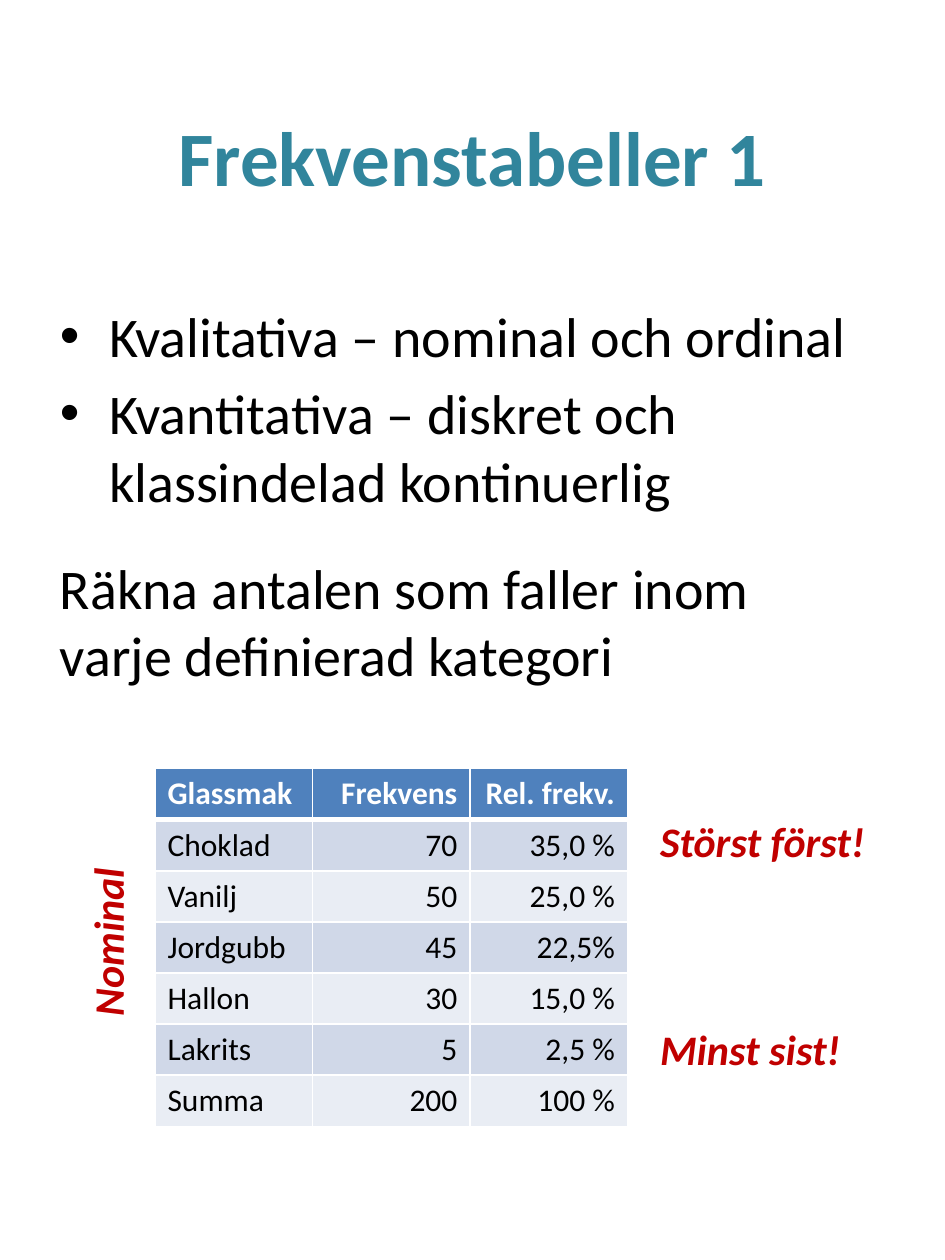
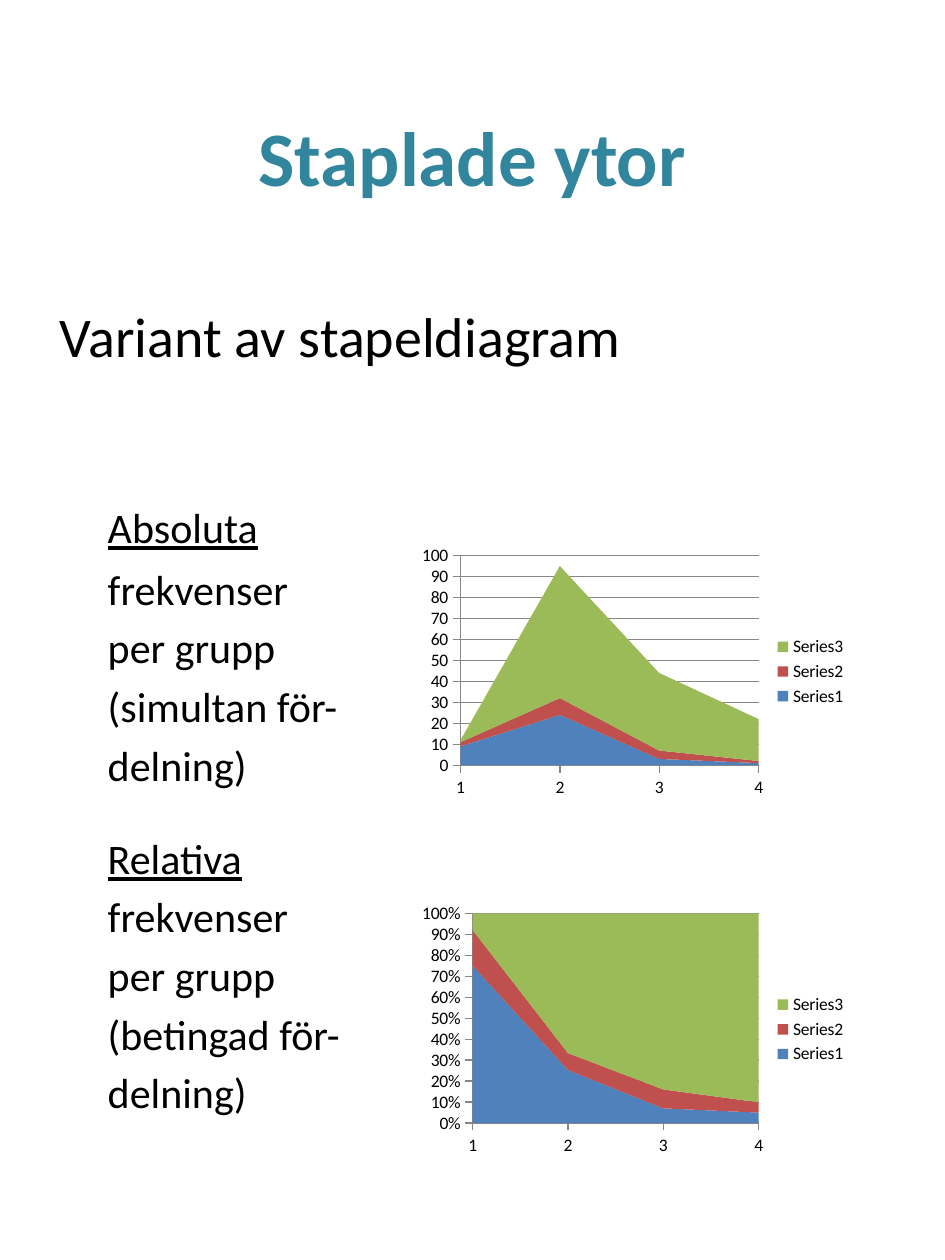
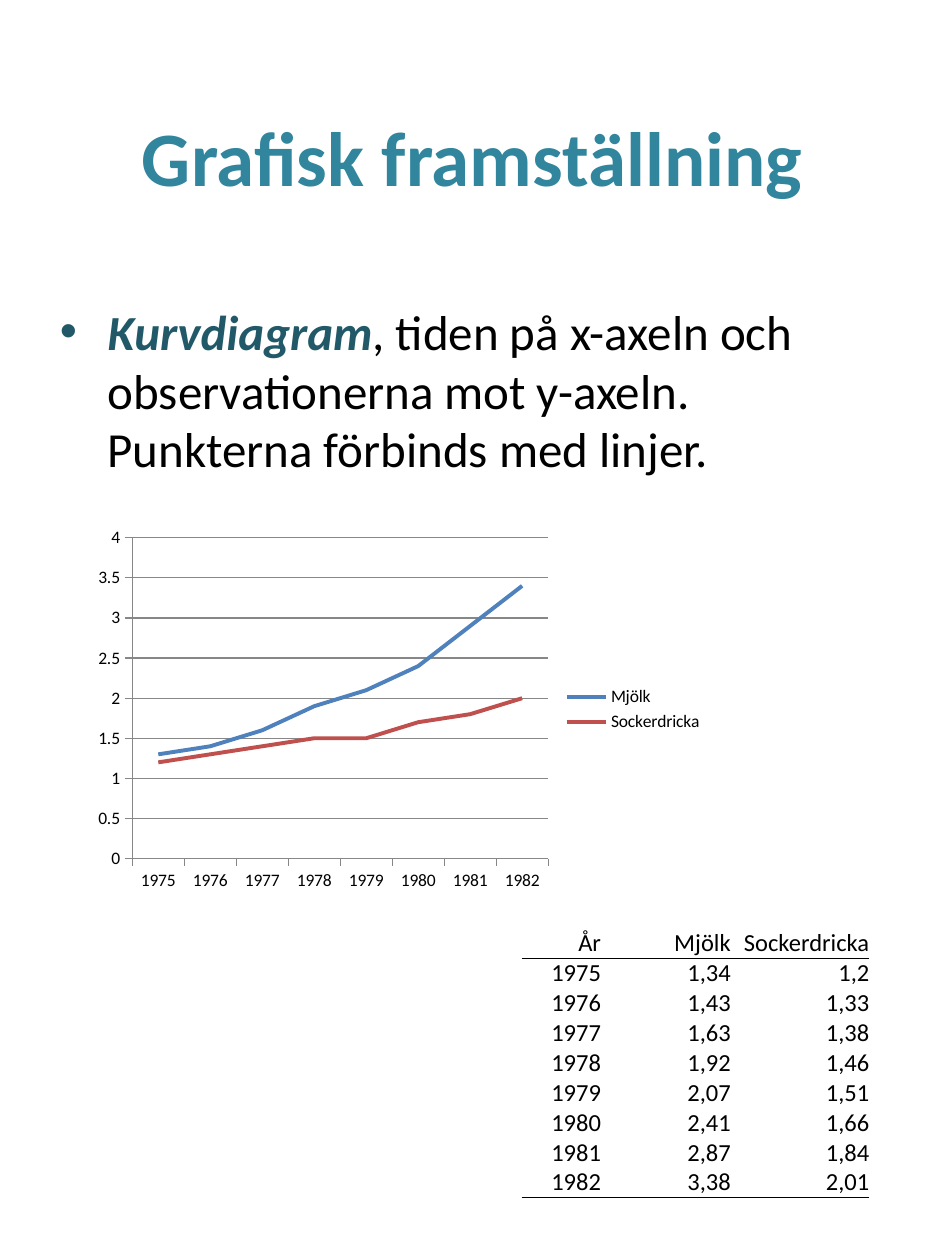
from typing import NamedTuple

from lxml.etree import SubElement
from pptx import Presentation
from pptx.chart.data import CategoryChartData
from pptx.dml.color import RGBColor
from pptx.enum.chart import XL_CHART_TYPE, XL_LEGEND_POSITION, XL_TICK_MARK
from pptx.enum.text import MSO_ANCHOR, MSO_AUTO_SIZE, PP_ALIGN
from pptx.oxml.ns import qn
from pptx.util import Inches, Pt

FONT = "Calibri"
BLACK, WHITE, RED = "000000", "FFFFFF", "C00000"
TEAL, DARK_TEAL, AXIS_GREY = "31859C", "215968", "878787"
HEADER_FILL, BAND_FILLS = "4F81BD", ("D0D8E8", "E9EDF4")
SERIES_COLORS = ("4F81BD", "C0504D", "9BBB59")
NO_TABLE_STYLE = "{2D5ABB26-0587-4C30-8999-92F81FD0307C}"

SLIDE_WIDTH, SLIDE_HEIGHT, TEXT_WIDTH = 7.5, 10, 6.75
MARGIN = (SLIDE_WIDTH - TEXT_WIDTH) / 2
BODY_TOP = 2.34

FLAVOURS = (
    ("Glassmak", "Frekvens", "Rel. frekv."),
    ("Choklad", "70", "35,0 %"),
    ("Vanilj", "50", "25,0 %"),
    ("Jordgubb", "45", "22,5%"),
    ("Hallon", "30", "15,0 %"),
    ("Lakrits", "5", "2,5 %"),
    ("Summa", "200", "100 %"),
)
DRINKS = (
    ("År", "Mjölk", "Sockerdricka"),
    ("1975", "1,34", "1,2"),
    ("1976", "1,43", "1,33"),
    ("1977", "1,63", "1,38"),
    ("1978", "1,92", "1,46"),
    ("1979", "2,07", "1,51"),
    ("1980", "2,41", "1,66"),
    ("1981", "2,87", "1,84"),
    ("1982", "3,38", "2,01"),
)
GROUP_COUNTS = {
    "Series1": (9, 24, 3, 1),
    "Series2": (2, 8, 4, 1),
    "Series3": (1, 63, 37, 20),
}


class Box(NamedTuple):
    left: float
    top: float
    width: float
    height: float

    def emu(self):
        return tuple(Inches(v) for v in self)


class Para(NamedTuple):
    text: str
    size: float = 32
    before: float = 0
    margin: float = 0
    bullet: bool = False
    underline: bool = False


class Label(NamedTuple):
    text: str
    box: Box
    rotation: float = 0
    align: PP_ALIGN = PP_ALIGN.LEFT


LABELS = (
    Label("Störst först!", Box(5.14, 6.42, 1.97, 0.55)),
    Label("Minst sist!", Box(5.14, 8.07, 1.97, 0.55)),
    Label("Nominal", Box(-0.11, 7.2, 1.97, 0.55), 270, PP_ALIGN.CENTER),
)


def rgb(value: str) -> RGBColor:
    return RGBColor.from_string(value)


def style(font, size: float, color: str = BLACK, bold: bool = False,
          italic: bool = False) -> None:
    font.name, font.size = FONT, Pt(size)
    font.bold, font.italic = bold, italic
    font.color.rgb = rgb(color)


def add_slide(prs, title: str, body: Box, paras: list[Para]):
    s = prs.slides.add_slide(prs.slide_layouts[1])
    sp = s.shapes.title
    sp.left, sp.top, sp.width, sp.height = Box(MARGIN, 0.4, TEXT_WIDTH, 1.67).emu()
    tf = sp.text_frame
    tf.text = title
    tf.vertical_anchor = MSO_ANCHOR.MIDDLE
    tf.paragraphs[0].alignment = PP_ALIGN.CENTER
    style(tf.paragraphs[0].runs[0].font, 44, TEAL, bold=True)

    sp = s.placeholders[1]
    sp.left, sp.top, sp.width, sp.height = body.emu()
    tf = sp.text_frame
    tf.auto_size = MSO_AUTO_SIZE.NONE
    for i, para in enumerate(paras):
        p = tf.add_paragraph() if i else tf.paragraphs[0]
        p.text = para.text
        p.space_before = Pt(para.before)
        style(p.runs[0].font, para.size)
        p.runs[0].font.underline = para.underline
        pPr = p._p.get_or_add_pPr()
        pPr.set("marL", str(Inches(para.margin)))
        pPr.set("indent", str(-Inches(para.margin) if para.bullet else 0))
        if para.bullet:
            SubElement(pPr, qn("a:buFont")).set("typeface", "Arial")
            SubElement(pPr, qn("a:buChar")).set("char", "•")
        else:
            SubElement(pPr, qn("a:buNone"))
    return s


def add_label(s, label: Label) -> None:
    sp = s.shapes.add_textbox(*label.box.emu())
    sp.rotation = label.rotation
    tf = sp.text_frame
    tf.word_wrap = True
    tf.text = label.text
    p = tf.paragraphs[0]
    p.alignment = label.align
    style(p.runs[0].font, 24, RED, bold=True, italic=True)


def set_border(cell, side: str, color: str, width: float = 1) -> None:
    """Draw one side, L, R, T or B; call in that order and before the fill."""
    ln = SubElement(cell._tc.get_or_add_tcPr(), qn(f"a:ln{side}"), w=str(Pt(width)))
    SubElement(SubElement(ln, qn("a:solidFill")), qn("a:srgbClr")).set("val", color)


def add_table(s, rows, box: Box, widths: tuple[float, ...]):
    table = s.shapes.add_table(len(rows), len(widths), *box.emu()).table
    for column, width in zip(table.columns, widths):
        column.width = Inches(width)
    for i, row in enumerate(rows):
        table.rows[i].height = Inches(box.height / len(rows))
        for j, text in enumerate(row):
            table.cell(i, j).text_frame.text = text
    return table


def add_flavour_table(s) -> None:
    table = add_table(s, FLAVOURS, Box(1.23, 6.1, 3.75, 2.84), (1.25,) * 3)
    for i in range(len(FLAVOURS)):
        for j in range(3):
            cell = table.cell(i, j)
            cell.vertical_anchor = MSO_ANCHOR.MIDDLE
            for side in "LRTB":
                set_border(cell, side, WHITE, 3 if side == "B" and i == 0 else 1)
            cell.fill.solid()
            cell.fill.fore_color.rgb = rgb(BAND_FILLS[(i - 1) % 2] if i else HEADER_FILL)
            p = cell.text_frame.paragraphs[0]
            p.alignment = PP_ALIGN.RIGHT if j else PP_ALIGN.LEFT
            style(p.runs[0].font, 18, BLACK if i else WHITE, bold=i == 0)


def add_drink_table(s) -> None:
    table = add_table(s, DRINKS, Box(4.14, 7.37, 2.76, 2.1), (0.63, 1.03, 1.1))
    table.first_row = table.horz_banding = False
    table._tbl.tblPr.find(qn("a:tableStyleId")).text = NO_TABLE_STYLE
    last = len(DRINKS) - 1
    for i in range(len(DRINKS)):
        for j in range(3):
            cell = table.cell(i, j)
            cell.margin_left = cell.margin_right = 0
            cell.margin_top = cell.margin_bottom = 0
            cell.vertical_anchor = MSO_ANCHOR.BOTTOM
            if i in (0, last):
                set_border(cell, "B", BLACK, 0.75)
            cell.fill.background()
            p = cell.text_frame.paragraphs[0]
            p.alignment = PP_ALIGN.RIGHT
            style(p.runs[0].font, 14)


def add_chart(s, kind: XL_CHART_TYPE, box: Box, categories, series: dict,
              number_format: str = "General"):
    data = CategoryChartData()
    data.categories = categories
    for name, values in series.items():
        data.add_series(name, values)
    chart = s.shapes.add_chart(kind, *box.emu(), data).chart
    style(chart.font, 10)
    chart.has_title = False
    chart.has_legend = True
    chart.legend.position = XL_LEGEND_POSITION.RIGHT
    chart.legend.include_in_layout = False
    chart.value_axis.has_major_gridlines = True
    chart.value_axis.major_gridlines.format.line.color.rgb = rgb(AXIS_GREY)
    chart.value_axis.tick_labels.number_format = number_format
    chart.value_axis.tick_labels.number_format_is_linked = False
    for axis in (chart.category_axis, chart.value_axis):
        axis.major_tick_mark = XL_TICK_MARK.OUTSIDE
        axis.format.line.color.rgb = rgb(AXIS_GREY)
    plot = chart.plots[0]
    plot.vary_by_categories = False
    for ser, color in zip(plot.series, SERIES_COLORS):
        if kind == XL_CHART_TYPE.LINE:
            ser.smooth = False
            ser.format.line.width = Pt(2.25)
            ser.format.line.color.rgb = rgb(color)
        else:
            ser.format.fill.solid()
            ser.format.fill.fore_color.rgb = rgb(color)
    return chart


def add_area_chart(s, kind: XL_CHART_TYPE, top: float, series: dict,
                   number_format: str = "General") -> None:
    chart = add_chart(s, kind, Box(3.28, top, 3.54, 2.08), "1234", series, number_format)
    chart.value_axis._element.find(qn("c:crossBetween")).set("val", "midCat")


def group_paras(heading: str, kind: str, before: float, after: float) -> list[Para]:
    """Underlined heading with the four lines that explain it."""
    lines = ("frekvenser", "per grupp", f"({kind} för-", "delning)")
    return [Para(heading, 24, before, 0.38, underline=True)] + [
        Para(line, 24, 4.7 if i else after, 0.38) for i, line in enumerate(lines)]


def frequency_slide(prs) -> None:
    s = add_slide(prs, "Frekvenstabeller 1", Box(MARGIN, BODY_TOP, 6.52, 7.47), [
        Para("Kvalitativa – nominal och ordinal", margin=0.39, bullet=True),
        Para("Kvantitativa – diskret och klassindelad kontinuerlig",
             before=6, margin=0.39, bullet=True),
        Para("Räkna antalen som faller inom varje definierad kategori", before=23),
    ])
    add_flavour_table(s)
    for label in LABELS:
        add_label(s, label)


def area_slide(prs) -> None:
    s = add_slide(prs, "Staplade ytor", Box(MARGIN, BODY_TOP, TEXT_WIDTH, 7.18), [
        Para("Variant av stapeldiagram"),
        *group_paras("Absoluta", "simultan", 76, 6.6),
        *group_paras("Relativa", "betingad", 24.4, 4.7),
    ])
    totals = [sum(column) for column in zip(*GROUP_COUNTS.values())]
    percents = {name: [round(100 * v / total) for v, total in zip(values, totals)]
                for name, values in GROUP_COUNTS.items()}
    add_area_chart(s, XL_CHART_TYPE.AREA_STACKED_100, 7.13, percents, "0%")
    add_area_chart(s, XL_CHART_TYPE.AREA_STACKED, 4.29, GROUP_COUNTS)


def line_slide(prs) -> None:
    s = add_slide(prs, "Grafisk framställning", Box(MARGIN, BODY_TOP, TEXT_WIDTH, 7.16),
                  [Para("Kurvdiagram", 28, margin=0.38, bullet=True)])
    p = s.placeholders[1].text_frame.paragraphs[0]
    style(p.runs[0].font, 28, DARK_TEAL, bold=True, italic=True)
    r = p.add_run()
    r.text = (", tiden på x-axeln och observationerna mot y-axeln. "
              "Punkterna förbinds med linjer.")
    style(r.font, 28)

    (_, *names), *rows = DRINKS
    years, *columns = zip(*rows)
    series = {name: [round(float(v.replace(",", ".")), 1) for v in column]
              for name, column in zip(names, columns)}
    add_chart(s, XL_CHART_TYPE.LINE, Box(0.68, 4.13, 5, 3), years, series)
    add_drink_table(s)


def main() -> None:
    prs = Presentation()
    prs.slide_width, prs.slide_height = Inches(SLIDE_WIDTH), Inches(SLIDE_HEIGHT)
    frequency_slide(prs)
    area_slide(prs)
    line_slide(prs)
    prs.save("out.pptx")


if __name__ == "__main__":
    main()
